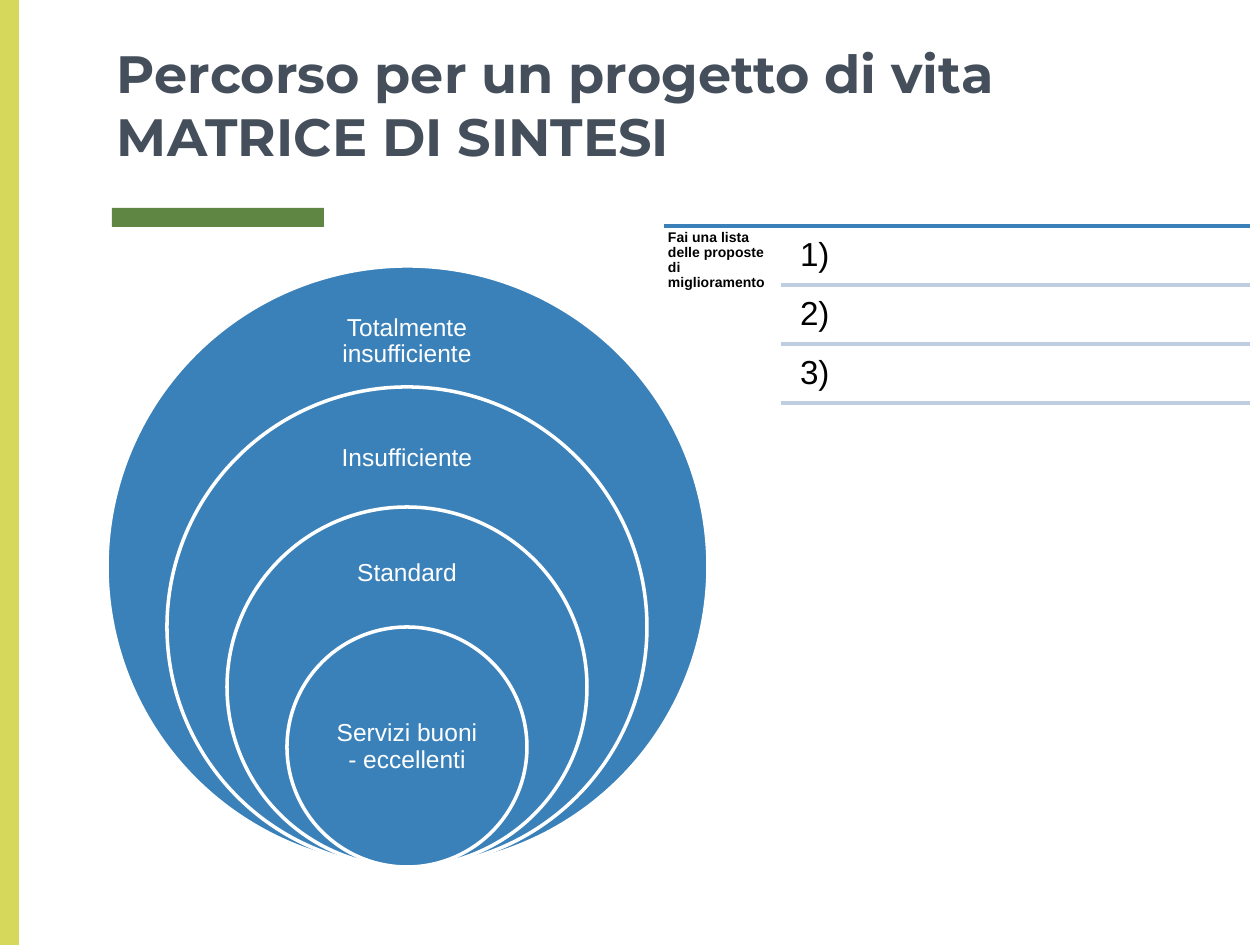
from dataclasses import dataclass

from lxml import etree
from pptx import Presentation
from pptx.dml.color import RGBColor
from pptx.enum.shapes import MSO_CONNECTOR as CONN, MSO_SHAPE as SHAPE
from pptx.enum.text import MSO_ANCHOR as ANCHOR, PP_ALIGN as ALIGN
from pptx.oxml.ns import qn
from pptx.util import Emu, Pt

PX = 914400 / 126
BLUE, WHITE, BLACK, RULE = "3A81BA", "FFFFFF", "000000", "BFCDE0"
CENTER_X, BASE_Y = 407, 867
LIST_Y, ROW_H, LIST_RIGHT = 226, 59, 1250


@dataclass
class Ring:
    label: str
    diameter: int
    text_y: int
    text_h: int
    text_w: int = 168


RINGS = [
    Ring("Totalmente insufficiente", 601, 296, 91),
    Ring("Insufficiente", 480, 415, 87),
    Ring("Standard", 360, 533, 81),
    Ring("Servizi buoni - eccellenti", 240, 687, 120, 170),
]


def px(n: int) -> Emu:
    return Emu(round(n * PX))


def rgb(color: str) -> RGBColor:
    return RGBColor.from_string(color)


def add_shape(shapes, kind, x: int, y: int, w: int, h: int, fill: str, line: str = ""):
    sp = shapes.add_shape(kind, px(x), px(y), px(w), px(h))
    sp.shadow.inherit = False
    sp.fill.solid()
    sp.fill.fore_color.rgb = rgb(fill)
    if line:
        sp.line.color.rgb = rgb(line)
        sp.line.width = Pt(2)
    else:
        sp.line.fill.background()
    return sp


def add_text(shapes, text: str, x: int, y: int, w: int, h: int, *, size: int,
             color: str, font: str = "Arial", bold: bool = False, inset: int = 13,
             align=ALIGN.LEFT, anchor=ANCHOR.TOP, spacing: float = 0.9):
    sp = shapes.add_textbox(px(x), px(y), px(w), px(h))
    tf = sp.text_frame
    tf.word_wrap = True
    tf.vertical_anchor = anchor
    tf.margin_left = tf.margin_right = tf.margin_top = tf.margin_bottom = px(inset)
    tf.text = text
    for p in tf.paragraphs:
        p.alignment = align
        p.line_spacing = spacing
        for r in p.runs:
            r.font.name = font
            r.font.size = Pt(size)
            r.font.bold = bold
            r.font.color.rgb = rgb(color)
    return sp


def add_rule(shapes, x: int, y: int, color: str):
    line = shapes.add_connector(CONN.STRAIGHT, px(x), px(y), px(LIST_RIGHT), px(y))
    line.line.color.rgb = rgb(color)
    line.line.width = Pt(2)
    etree.SubElement(line._element.spPr, qn("a:effectLst"))
    return line


def add_ring(shapes, ring: Ring):
    d = ring.diameter
    add_shape(shapes, SHAPE.OVAL, CENTER_X - d // 2, BASE_Y - d, d, d, BLUE, WHITE)
    add_text(shapes, ring.label, CENTER_X - ring.text_w // 2, ring.text_y,
             ring.text_w, ring.text_h, size=14, color=WHITE, inset=14,
             align=ALIGN.CENTER, anchor=ANCHOR.MIDDLE)


def add_proposals(shapes, title: str, count: int):
    add_rule(shapes, 664, LIST_Y, BLUE)
    add_text(shapes, title, 664, LIST_Y, 117, 180, size=8, color=BLACK, bold=True, inset=4)
    for i in range(count):
        y = LIST_Y + i * ROW_H
        add_text(shapes, f"{i + 1})", 790, y + 2, 461, 57, size=19, color=BLACK, inset=10)
        add_rule(shapes, 781, y + ROW_H, RULE)


def main():
    prs = Presentation()
    prs.slide_width, prs.slide_height = px(1260), px(945)
    s = prs.slides.add_slide(prs.slide_layouts[6])

    add_shape(s.shapes, SHAPE.RECTANGLE, 112, 208, 212, 19, "608643")
    add_shape(s.shapes, SHAPE.RECTANGLE, 0, 0, 19, 945, "D5D85A")
    add_text(s.shapes, "Percorso per un progetto di vita\nMATRICE DI SINTESI",
             104, 2, 1070, 178, size=30, color="454F5B", font="Montserrat",
             bold=True, anchor=ANCHOR.BOTTOM, spacing=1.0)

    rings = s.shapes.add_group_shape().shapes
    for ring in RINGS:
        add_ring(rings, ring)

    add_proposals(s.shapes.add_group_shape().shapes,
                  "Fai una lista delle proposte di miglioramento", 3)
    prs.save("out.pptx")


if __name__ == "__main__":
    main()
